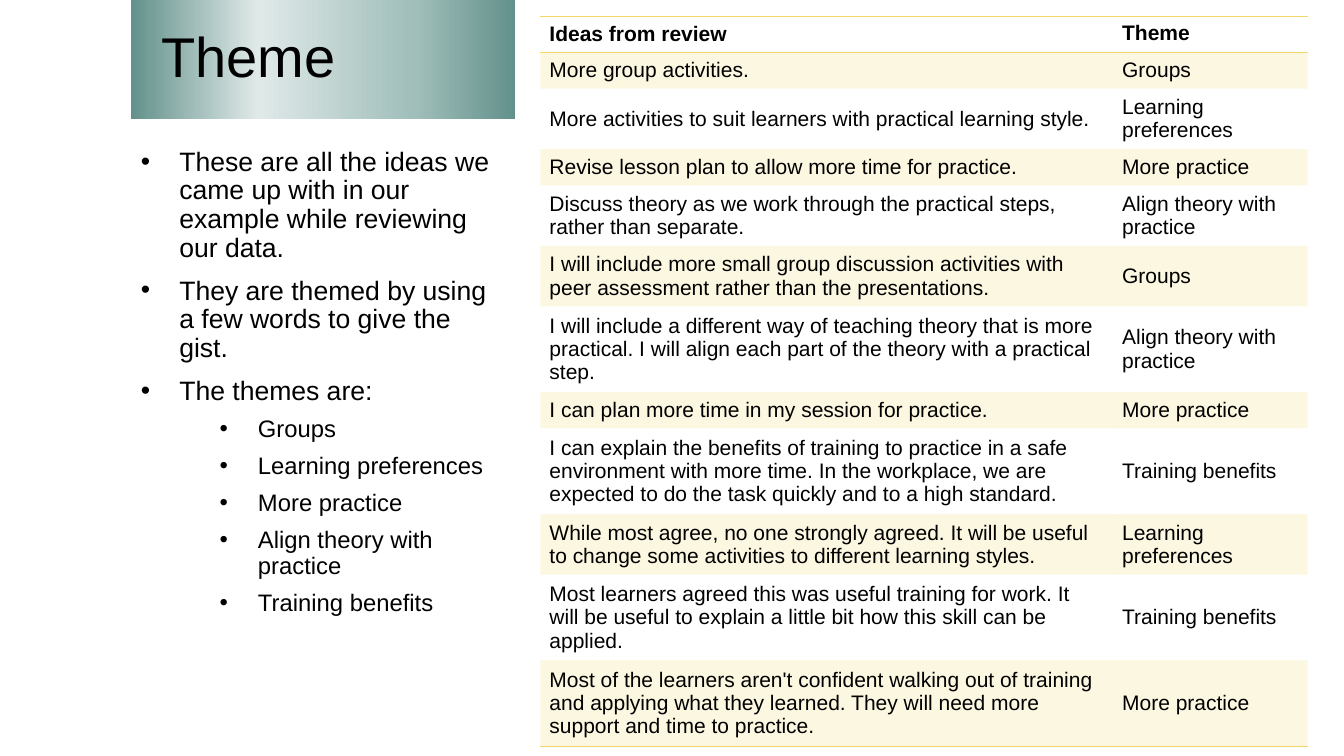
from lxml.etree import SubElement
from pptx import Presentation
from pptx.dml.color import RGBColor
from pptx.enum.shapes import MSO_SHAPE
from pptx.enum.text import MSO_ANCHOR, PP_ALIGN
from pptx.oxml.ns import qn
from pptx.util import Inches, Pt

GOLD = "F3D867"
BLACK = "000000"
PLAIN_TABLE_STYLE = "{2D5ABB26-0587-4C30-8999-92F81FD0307C}"


def style_font(font, size, bold=False):
    font.name = "Arial"
    font.size = Pt(size)
    font.bold = bold
    font.color.rgb = RGBColor.from_string(BLACK)


def add_border(cell, side, position):
    """Draw a 1 pt gold rule; position keeps borders ahead of the cell's fill."""
    properties = cell._tc.get_or_add_tcPr()
    line = SubElement(properties, qn(f"a:{side}"), w=str(Pt(1)))
    SubElement(SubElement(line, qn("a:solidFill")), qn("a:srgbClr"), val=GOLD)
    properties.insert(position, line)


presentation = Presentation()
presentation.slide_width = Inches(13.33)
presentation.slide_height = Inches(7.5)
slide = presentation.slides.add_slide(presentation.slide_layouts[6])

# Title band
title = slide.shapes.add_shape(
    MSO_SHAPE.RECTANGLE, Inches(1.3), 0, Inches(3.81), Inches(1.18))
title.shadow.inherit = False
title.line.fill.background()
title.fill.gradient()
title.fill.gradient_angle = 0
stops = title._element.spPr.find(".//" + qn("a:gsLst"))
stops.clear()
for percent, shade in [(0, "63918B"), (33, "DFE9E8"), (74, "A0BEBA"), (100, "63918B")]:
    stop = SubElement(stops, qn("a:gs"), pos=str(percent * 1000))
    SubElement(stop, qn("a:srgbClr"), val=shade)
title.text_frame.text = "Theme"
title.text_frame.word_wrap = True
title.text_frame.vertical_anchor = MSO_ANCHOR.MIDDLE
heading = title.text_frame.paragraphs[0]
heading.alignment = PP_ALIGN.LEFT
heading.line_spacing = 0.9
heading._p.get_or_add_pPr().set("marL", str(Inches(0.2)))
style_font(heading.runs[0].font, 40)

# Explanation and list of themes
points = [
    (0, "These are all the ideas we came up with in our example while reviewing our data."),
    (0, "They are themed by using a few words to give the gist."),
    (0, "The themes are:"),
    (1, "Groups"),
    (1, "Learning preferences"),
    (1, "More practice"),
    (1, "Align theory with practice"),
    (1, "Training benefits"),
]
level_styles = [(0.38, 19, 10), (1.16, 17, 8)]  # margin, font size, space before
explanation = slide.shapes.add_textbox(
    Inches(1.3), Inches(1.42), Inches(3.81), Inches(4.92)).text_frame
explanation.word_wrap = True
for index, (level, wording) in enumerate(points):
    margin, size, space_before = level_styles[level]
    point = explanation.add_paragraph() if index else explanation.paragraphs[0]
    point.text = wording
    point.level = level
    point.line_spacing = 0.9
    point.space_before = Pt(space_before if index else 0)
    properties = point._p.get_or_add_pPr()
    properties.set("marL", str(Inches(margin)))
    properties.set("indent", str(Inches(-0.38)))
    SubElement(properties, qn("a:buFont"), typeface="Arial")
    SubElement(properties, qn("a:buChar"), char="•")
    style_font(point.runs[0].font, size)

# Table of ideas: number of text lines, idea, theme
ideas = [
    (1, "Ideas from review", "Theme"),
    (1, "More group activities.", "Groups"),
    (2, "More activities to suit learners with practical learning style.",
     "Learning preferences"),
    (1, "Revise lesson plan to allow more time for practice.", "More practice"),
    (2, "Discuss theory as we work through the practical steps, rather than separate.",
     "Align theory with practice"),
    (2, "I will include more small group discussion activities with peer assessment "
     "rather than the presentations.", "Groups"),
    (3, "I will include a different way of teaching theory that is more practical. "
     "I will align each part of the theory with a practical step.",
     "Align theory with practice"),
    (1, "I can plan more time in my session for practice.", "More practice"),
    (3, "I can explain the benefits of training to practice in a safe environment with "
     "more time. In the workplace, we are expected to do the task quickly and to a "
     "high standard.", "Training benefits"),
    (2, "While most agree, no one strongly agreed. It will be useful to change some "
     "activities to different learning styles.", "Learning preferences"),
    (3, "Most learners agreed this was useful training for work. It will be useful to "
     "explain a little bit how this skill can be applied.", "Training benefits"),
    (3, "Most of the learners aren't confident walking out of training and applying what "
     "they learned. They will need more support and time to practice.", "More practice"),
]
row_heights = {1: 0.36, 2: 0.59, 3: 0.83}
table = slide.shapes.add_table(
    len(ideas), 2, Inches(5.36), Inches(0.16), Inches(7.61), Inches(7.12)).table
table._tbl.tblPr.find(qn("a:tableStyleId")).text = PLAIN_TABLE_STYLE
table.horz_banding = False
for column, width in zip(table.columns, [5.68, 1.93]):
    column.width = Inches(width)
for row, (line_count, *entries) in enumerate(ideas):
    table.rows[row].height = Inches(row_heights[line_count])
    for column, entry in enumerate(entries):
        cell = table.cell(row, column)
        cell.text = entry
        cell.margin_left = cell.margin_right = Inches(0.09)
        cell.margin_top = cell.margin_bottom = Inches(0.05)
        is_theme_header = row == 0 and column == 1
        cell.vertical_anchor = MSO_ANCHOR.TOP if is_theme_header else MSO_ANCHOR.MIDDLE
        style_font(cell.text_frame.paragraphs[0].runs[0].font, 15, bold=row == 0)
        if row % 2:
            cell.fill.solid()
            cell.fill.fore_color.rgb = RGBColor.from_string(GOLD)
            tint = cell._tc.tcPr.find(".//" + qn("a:srgbClr"))
            SubElement(tint, qn("a:alpha"), val="20000")
        else:
            cell.fill.background()
        if row in (0, len(ideas) - 1):
            add_border(cell, "lnB", 0)
        if row == 0:
            add_border(cell, "lnT", 0)

presentation.save("out.pptx")
